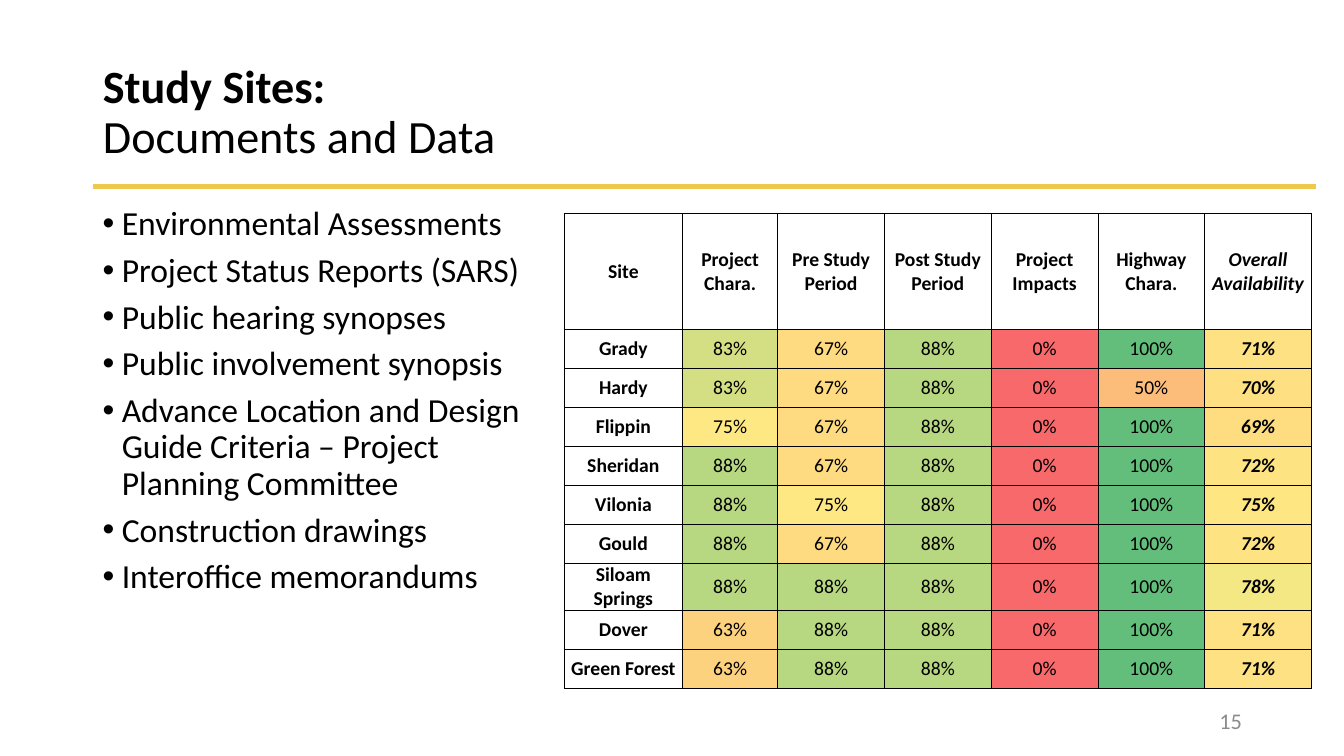
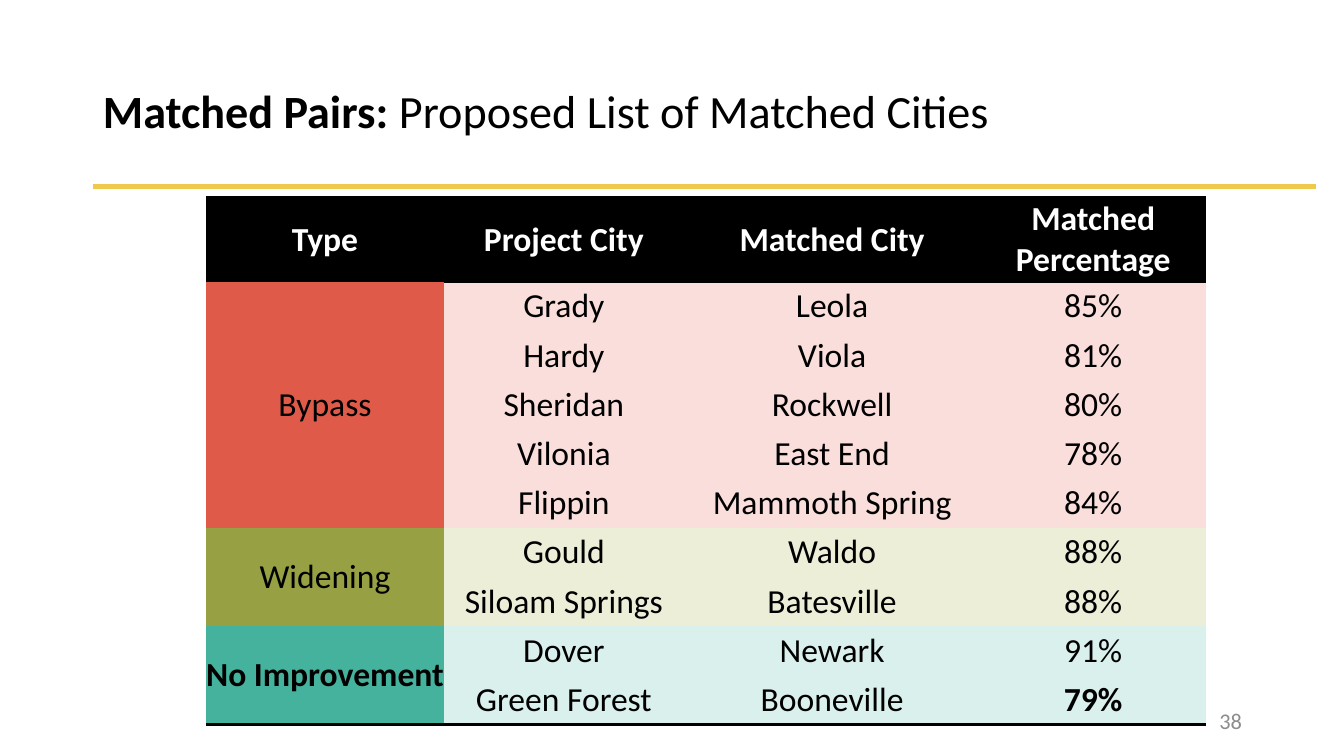
from dataclasses import dataclass

from lxml import etree
from pptx import Presentation
from pptx.dml.color import RGBColor
from pptx.enum.shapes import MSO_CONNECTOR
from pptx.enum.text import MSO_ANCHOR, MSO_AUTO_SIZE, PP_ALIGN
from pptx.oxml.ns import qn
from pptx.util import Cm, Pt

LEFT, RIGHT, CENTER = PP_ALIGN.LEFT, PP_ALIGN.RIGHT, PP_ALIGN.CENTER
MIDDLE = MSO_ANCHOR.MIDDLE
NO_AUTOFIT = MSO_AUTO_SIZE.NONE
STRAIGHT = MSO_CONNECTOR.STRAIGHT

FONT = "Calibri"
BLACK, WHITE, GOLD, GREY = "000000", "FFFFFF", "EFC94C", "8C8C8C"
PLAIN_TABLE = "{2D5ABB26-0587-4C30-8999-92F81FD0307C}"
MARGIN = 2.34
TITLE_ONLY = 5

SCORE_FILLS = {0: "F8696B", 50: "FCBD7B", 63: "FDD27F", 67: "FEDA80",
               75: "FEE883", 83: "D3DF82", 88: "B7D780", 100: "63BE7B"}
OVERALL_FILLS = {69: "FEDD81", 70: "FEDF81", 71: "FEE182", 72: "FEE382",
                 75: "FEE783", 78: "F4E884"}


@dataclass(frozen=True)
class Cell:
    """Text and look of one table cell; edges are border tags."""
    text: str
    fill: str | None = None
    color: str = BLACK
    bold: bool = False
    italic: bool = False
    edges: tuple[str, ...] = ()
    rows: int = 1


@dataclass(frozen=True)
class Grid:
    """Place and measures of a table, in centimetres and points."""
    left: float
    top: float
    widths: list[float]
    heights: list[float]
    size: float
    border: float


@dataclass(frozen=True)
class Site:
    """Share of data available for one study site."""
    name: str
    scores: tuple[int, ...]
    overall: int


@dataclass(frozen=True)
class Group:
    """Matched cities of one project type."""
    name: str
    color: str
    tint: str
    pairs: tuple[tuple[str, str, int], ...]
    bold: bool = False


DOCUMENTS = [
    "Environmental Assessments",
    "Project Status Reports (SARS)",
    "Public hearing synopses",
    "Public involvement synopsis",
    "Advance Location and Design Guide Criteria – Project Planning Committee",
    "Construction drawings",
    "Interoffice memorandums",
]
SITE_HEADS = ["Site", "Project Chara.", "Pre Study Period", "Post Study Period",
              "Project Impacts", "Highway Chara.", "Overall Availability"]
SITES = [
    Site("Grady", (83, 67, 88, 0, 100), 71),
    Site("Hardy", (83, 67, 88, 0, 50), 70),
    Site("Flippin", (75, 67, 88, 0, 100), 69),
    Site("Sheridan", (88, 67, 88, 0, 100), 72),
    Site("Vilonia", (88, 75, 88, 0, 100), 75),
    Site("Gould", (88, 67, 88, 0, 100), 72),
    Site("Siloam Springs", (88, 88, 88, 0, 100), 78),
    Site("Dover", (63, 88, 88, 0, 100), 71),
    Site("Green Forest", (63, 88, 88, 0, 100), 71),
]
PAIR_HEADS = ["Type", "Project City", "Matched City", "Matched Percentage"]
GROUPS = [
    Group("Bypass", "DF5A49", "F9DEDB", (
        ("Grady", "Leola", 85), ("Hardy", "Viola", 81), ("Sheridan", "Rockwell", 80),
        ("Vilonia", "East End", 78), ("Flippin", "Mammoth Spring", 84))),
    Group("Widening", "97A144", "ECEED7", (
        ("Gould", "Waldo", 88), ("Siloam Springs", "Batesville", 88))),
    Group("No Improvement", "45B29D", "D9F0EC", (
        ("Dover", "Newark", 91), ("Green Forest", "Booneville", 79)), bold=True),
]


def rgb(value: str) -> RGBColor:
    """Turn a hex string into a colour."""
    return RGBColor.from_string(value)


def style(r, size: float, color: str = BLACK, bold: bool = False,
          italic: bool = False) -> None:
    """Format one run."""
    r.font.name, r.font.size = FONT, Pt(size)
    r.font.bold, r.font.italic = bold, italic
    r.font.color.rgb = rgb(color)


def add_rule(slide) -> None:
    """Draw the gold line below the title."""
    line = slide.shapes.add_connector(STRAIGHT, Cm(MARGIN), Cm(4.7), Cm(33.17), Cm(4.7))
    line.line.color.rgb = rgb(GOLD)
    line.line.width = Pt(3)
    etree.SubElement(line._element.spPr, qn("a:effectLst"))


def add_title(slide, lead: str, rest: str) -> None:
    """Fill the title placeholder with a bold lead and a plain rest."""
    sp = slide.shapes.title
    sp.left, sp.top, sp.width, sp.height = Cm(MARGIN), Cm(1.02), Cm(29.21), Cm(3.68)
    tf = sp.text_frame
    tf.auto_size, tf.vertical_anchor = NO_AUTOFIT, MIDDLE
    p = tf.paragraphs[0]
    p.alignment, p.line_spacing = LEFT, 0.9
    p.text = lead + rest if rest.startswith("\v") else lead
    if p.text == lead:
        p.add_run().text = rest
    for r, bold in zip(p.runs, (True, False)):
        style(r, 33, bold=bold)


def add_number(slide, number: int) -> None:
    """Write the slide number at the lower right."""
    tf = slide.shapes.add_textbox(Cm(23.93), Cm(17.65), Cm(7.62), Cm(1.02)).text_frame
    tf.word_wrap, tf.vertical_anchor = True, MIDDLE
    p = tf.paragraphs[0]
    p.text, p.alignment = str(number), RIGHT
    style(p.runs[0], 16, GREY)


def add_slide(prs, lead: str, rest: str, number: int):
    """Add a slide with the shared title, rule and number."""
    slide = prs.slides.add_slide(prs.slide_layouts[TITLE_ONLY])
    add_rule(slide)
    add_title(slide, lead, rest)
    add_number(slide, number)
    return slide


def add_bullets(slide, items: list[str]) -> None:
    """Write the bulleted list on the left."""
    tf = slide.shapes.add_textbox(Cm(MARGIN), Cm(5.08), Cm(11.89), Cm(12.09)).text_frame
    tf.word_wrap = True
    for i, item in enumerate(items):
        p = tf.paragraphs[0] if i == 0 else tf.add_paragraph()
        p.text, p.line_spacing = item, 0.9
        p.space_before = Pt(7.5 if i else 0)
        pPr = p._p.get_or_add_pPr()
        pPr.set("marL", str(Cm(0.48)))
        pPr.set("indent", str(-Cm(0.48)))
        etree.SubElement(pPr, qn("a:buFont"), typeface="Arial")
        etree.SubElement(pPr, qn("a:buChar"), char="•")
        style(p.runs[0], 24)


def add_edge(cell, tag: str, width: float) -> None:
    """Draw one black border of a cell."""
    ln = etree.SubElement(cell._tc.get_or_add_tcPr(), qn(f"a:{tag}"), w=str(Pt(width)))
    fill = etree.SubElement(ln, qn("a:solidFill"))
    etree.SubElement(fill, qn("a:srgbClr"), val=BLACK)


def fill_cell(cell, item: Cell, grid: Grid) -> None:
    """Write and format one table cell."""
    cell.margin_left = cell.margin_right = cell.margin_top = cell.margin_bottom = 0
    cell.vertical_anchor = MIDDLE
    for tag in item.edges:
        add_edge(cell, tag, grid.border)
    if item.fill:
        cell.fill.solid()
        cell.fill.fore_color.rgb = rgb(item.fill)
    else:
        cell.fill.background()
    if item.text:
        p = cell.text_frame.paragraphs[0]
        p.text, p.alignment = item.text, CENTER
        style(p.runs[0], grid.size, item.color, item.bold, item.italic)


def add_grid(slide, grid: Grid, rows: list[list[Cell]]) -> None:
    """Draw a table from rows of cells."""
    table = slide.shapes.add_table(
        len(rows), len(grid.widths), Cm(grid.left), Cm(grid.top),
        Cm(sum(grid.widths)), Cm(sum(grid.heights))).table
    table.first_row = table.horz_banding = False
    table._tbl.tblPr.find(qn("a:tableStyleId")).text = PLAIN_TABLE
    for column, width in zip(table.columns, grid.widths):
        column.width = Cm(width)
    for row, height in zip(table.rows, grid.heights):
        row.height = Cm(height)
    for i, items in enumerate(rows):
        for j, item in enumerate(items):
            fill_cell(table.cell(i, j), item, grid)
            if item.rows > 1:
                table.cell(i, j).merge(table.cell(i + item.rows - 1, j))


def site_rows() -> list[list[Cell]]:
    """Build the cells of the availability table."""
    box = ("lnL", "lnR", "lnT", "lnB")
    last = SITE_HEADS[-1]
    rows = [[Cell(head, bold=True, italic=head == last, edges=box) for head in SITE_HEADS]]
    for site in SITES:
        scores = [Cell(f"{n}%", SCORE_FILLS[n], edges=box) for n in site.scores]
        overall = Cell(f"{site.overall}%", OVERALL_FILLS[site.overall],
                       bold=True, italic=True, edges=box)
        rows.append([Cell(site.name, bold=True, edges=box), *scores, overall])
    return rows


def pair_rows() -> list[list[Cell]]:
    """Build the cells of the matched cities table."""
    rows = [[Cell(head, BLACK, WHITE, bold=True, edges=("lnT", "lnB") if j else ("lnT",))
             for j, head in enumerate(PAIR_HEADS)]]
    for group in GROUPS:
        closing = group is GROUPS[-1]
        for i, (project, match, share) in enumerate(group.pairs):
            end = closing and i == len(group.pairs) - 1
            edges = ("lnB",) if end else ()
            kind = Cell("" if i else group.name, group.color, bold=group.bold,
                        edges=("lnB",) if closing else (),
                        rows=1 if i else len(group.pairs))
            rows.append([kind,
                         Cell(project, group.tint, edges=edges),
                         Cell(match, group.tint, edges=edges),
                         Cell(f"{share}%", group.tint, bold=end, edges=edges)])
    return rows


def main() -> None:
    """Build and save the two slides."""
    prs = Presentation()
    prs.slide_width, prs.slide_height = Cm(33.87), Cm(19.05)

    slide = add_slide(prs, "Study Sites:", "\vDocuments and Data", 15)
    add_bullets(slide, DOCUMENTS)
    add_grid(slide, Grid(14.22, 5.38, [2.98, 2.4] + [2.69] * 5,
                         [2.93] + [0.98] * len(SITES), 14, 0.5), site_rows())

    slide = add_slide(prs, "Matched Pairs:", " Proposed List of Matched Cities", 38)
    add_grid(slide, Grid(5.18, 4.98, [6.02, 6.02, 7.5, 5.66],
                         [2.12] + [1.24] * 9, 24, 2), pair_rows())

    prs.save("out.pptx")


if __name__ == "__main__":
    main()
